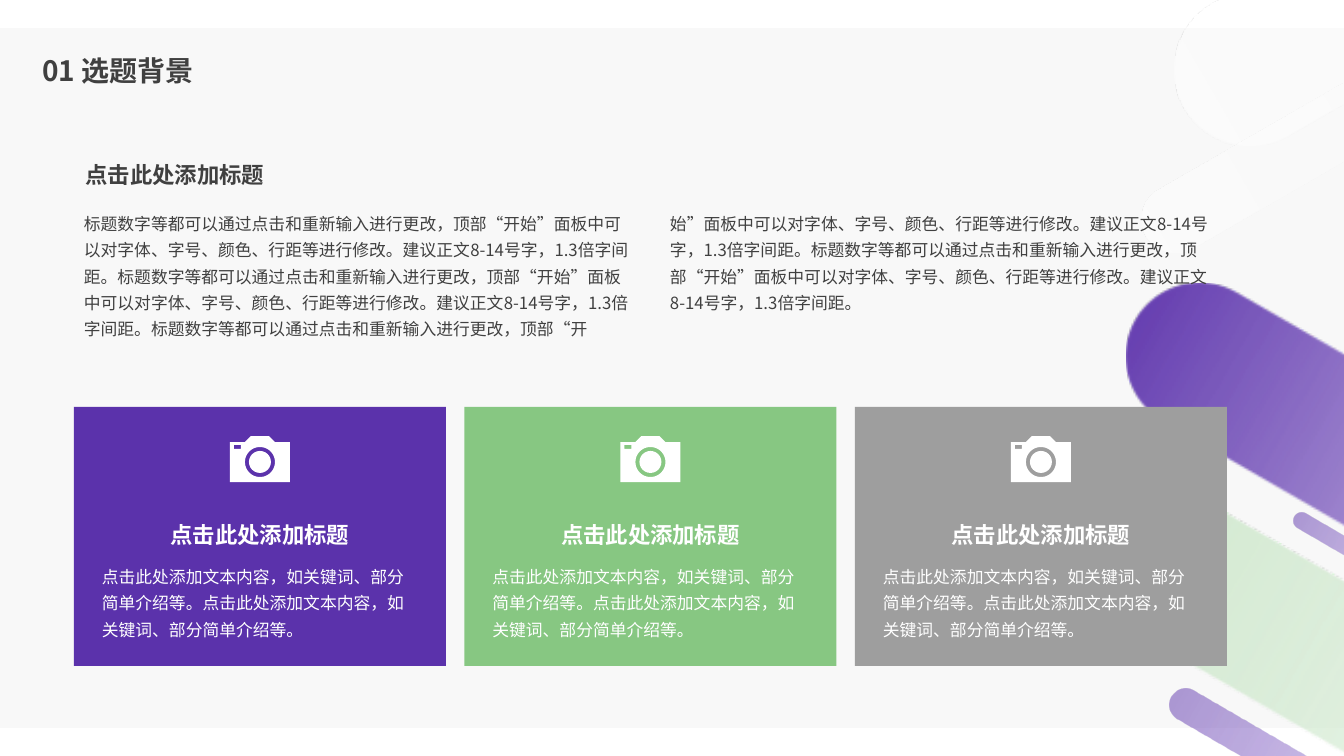
from dataclasses import dataclass
from math import cos, pi, sin

from pptx import Presentation
from pptx.dml.color import RGBColor
from pptx.enum.lang import MSO_LANGUAGE_ID as Lang
from pptx.enum.shapes import MSO_SHAPE as Preset
from pptx.enum.text import MSO_ANCHOR as Anchor, MSO_AUTO_SIZE as AutoSize, PP_ALIGN as Align
from pptx.oxml import parse_xml
from pptx.oxml.ns import nsdecls, qn
from pptx.util import Emu, Pt

EMU_PER_PX = 12192000 / 1344


@dataclass(frozen=True)
class Theme:
    purple: str = "5B32AB"
    purple_soft: str = "5F34B2"
    green: str = "87C782"
    green_pale: str = "D0E9CE"
    gray: str = "9E9E9E"
    panel: str = "F8F8F8"
    white: str = "FFFFFF"
    ink: str = "404040"
    title_size: int = 20
    heading_size: int = 16
    body_size: int = 12
    body_font: str = "Noto Sans CJK SC"
    heading_font: str = "TeX Gyre Adventor"


THEME = Theme()

HEADING = "点击此处添加标题"
INTRO = ("标题数字等都可以通过点击和重新输入进行更改，顶部“开始”面板中可以对字体、"
         "字号、颜色、行距等进行修改。建议正文8-14号字，1.3倍字间距。") * 4
CARD_BODY = "点击此处添加文本内容，如关键词、部分简单介绍等。" * 2

# Cards spread evenly between the margins
LEFT, RIGHT = 74, 1227
CARD_TOP, CARD_WIDTH, CARD_HEIGHT = 407, 372, 259
CARD_COLORS = (THEME.purple, THEME.green, THEME.gray)

# Gradient stops: position %, colour, opacity %
FADE_END = [(85, THEME.white, 50), (100, THEME.white, 50)]
PURPLE_FADE = [(0, THEME.purple, 100), (23, THEME.purple_soft, 40)] + FADE_END
LILAC_FADE = [(0, THEME.purple, 50), (23, THEME.purple_soft, 40)] + FADE_END
GREEN_FADE = [(0, THEME.green_pale, 100), (22, THEME.green_pale, 50)] + FADE_END
WHITE_FADE = [(0, THEME.white, 50), (21, THEME.white, 29),
              (85, THEME.white, 0), (100, THEME.white, 0)]

# Capsules: left, top, length, thickness, rotation, stops
CAPSULES = (
    (998, 764, 2071, 148, 210, PURPLE_FADE),
    (1105, -267, 1196, 152, 330, WHITE_FADE),
    (1111, 69, 531, 68, 330, WHITE_FADE),
    (976, 978, 2071, 148, 210, GREEN_FADE),
    (1278, 570, 246, 17, 210, LILAC_FADE),
    (1140, 799, 473, 33, 210, LILAC_FADE),
)


def px(length):
    return Emu(round(length * EMU_PER_PX))


def paint(shape, color):
    shape.shadow.inherit = False
    shape.fill.solid()
    shape.fill.fore_color.rgb = RGBColor.from_string(color)
    shape.line.fill.background()
    return shape


def add_preset(shapes, preset, left, top, width, height, color):
    return paint(shapes.add_shape(preset, px(left), px(top), px(width), px(height)), color)


def add_outline(shapes, left, top, contours, color):
    """Draw closed contours, given in px from (left, top), as one shape."""
    outlines = [[(px(x), px(y)) for x, y in contour] for contour in contours]
    builder = shapes.build_freeform(*outlines[0][0], scale=1.0)
    builder.add_line_segments(outlines[0][1:], close=True)
    for outline in outlines[1:]:
        builder.move_to(*outline[0])
        builder.add_line_segments(outline[1:], close=True)
    return paint(builder.convert_to_shape(px(left), px(top)), color)


def arc(center_x, center_y, radius, start, sweep, steps=48):
    angles = [start + sweep * step / steps for step in range(steps + 1)]
    return [(center_x + radius * cos(a), center_y + radius * sin(a)) for a in angles]


def apply_gradient(shape, stops, angle):
    stop_xml = "".join(
        f'<a:gs pos="{position * 1000}"><a:srgbClr val="{color}">'
        f'<a:alpha val="{opacity * 1000}"/></a:srgbClr></a:gs>'
        for position, color, opacity in stops)
    gradient = parse_xml(
        f'<a:gradFill {nsdecls("a")} rotWithShape="1"><a:gsLst>{stop_xml}</a:gsLst>'
        f'<a:lin ang="{angle * 60000}" scaled="0"/></a:gradFill>')
    properties = shape._element.spPr
    properties.replace(properties.find(qn("a:solidFill")), gradient)


def add_capsule(shapes, left, top, length, thickness, rotation, stops):
    """A bar with one round end that fades towards its flat end."""
    radius = thickness / 2
    outline = arc(radius, radius, radius, pi / 2, pi) + [(length, 0), (length, thickness)]
    round_end_right = rotation == 210
    if round_end_right:
        outline = [(length - x, y) for x, y in outline]
    capsule = add_outline(shapes, left, top, [outline], THEME.white)
    apply_gradient(capsule, stops, 180 if round_end_right else 0)
    capsule.rotation = rotation


def write(frame, text, size, color, font, bold=False, align=Align.LEFT, spacing=1.3):
    frame.text = text
    paragraph = frame.paragraphs[0]
    paragraph.alignment = align
    paragraph.line_spacing = spacing
    for run in paragraph.runs:
        run.font.size = Pt(size)
        run.font.bold = bold
        run.font.color.rgb = RGBColor.from_string(color)
        run.font.name = font
        run.font.language_id = Lang.SIMPLIFIED_CHINESE
        east_asian = parse_xml(f'<a:ea {nsdecls("a")} typeface="{THEME.body_font}"/>')
        run.font._element.find(qn("a:latin")).addnext(east_asian)


def add_text(shapes, left, top, width, height, wrap):
    frame = shapes.add_textbox(px(left), px(top), px(width), px(height)).text_frame
    frame.word_wrap = wrap
    frame.auto_size = AutoSize.SHAPE_TO_FIT_TEXT
    return frame


def add_heading(shapes, left, top, color):
    write(add_text(shapes, left, top, 202, 45, False), HEADING, THEME.heading_size,
          color, THEME.heading_font, bold=True, align=Align.CENTER)


def add_body(shapes, left, top, width, height, text, color):
    frame = add_text(shapes, left, top, width, height, True)
    write(frame, text, THEME.body_size, color, THEME.body_font)
    return frame


def add_camera(shapes, left, top):
    case = [(45, 6), (39, 0), (21, 0), (15, 6), (0, 6), (0, 46), (60, 46), (60, 6)]
    flash = [(4, 9), (4, 13), (11, 13), (11, 9)]
    lens_ring = arc(30, 26, 15, 0, 2 * pi)
    add_outline(shapes, left, top, [case, flash, lens_ring], THEME.white)
    add_preset(shapes, Preset.OVAL, left + 19, top + 15, 22, 22, THEME.white)


def add_card(slide, left, color):
    shapes = slide.shapes.add_group_shape().shapes
    add_preset(shapes, Preset.RECTANGLE, left, CARD_TOP, CARD_WIDTH, CARD_HEIGHT, color)
    add_camera(shapes, left + 156, CARD_TOP + 29)
    add_body(shapes, left + 18, CARD_TOP + 149, 337, 90, CARD_BODY, THEME.white)
    add_heading(shapes, left + 85, CARD_TOP + 101, THEME.white)


def set_title(slide, text):
    title = slide.shapes.title
    title.left, title.top, title.width, title.height = px(32), px(43), px(503), px(58)
    title.text_frame.vertical_anchor = Anchor.MIDDLE
    write(title.text_frame, text, THEME.title_size, THEME.ink, THEME.body_font,
          bold=True, spacing=0.9)
    title.text_frame.paragraphs[0].space_before = Pt(10)
    # Bring the title in front of the background panel
    slide.shapes._spTree.append(title._element)


def main():
    deck = Presentation()
    deck.slide_width, deck.slide_height = px(1344), px(756)
    slide = deck.slides.add_slide(deck.slide_layouts[5])

    # Background
    add_preset(slide.shapes, Preset.RECTANGLE, 0, 28, 1344, 700, THEME.panel)
    for capsule in CAPSULES:
        add_capsule(slide.shapes, *capsule)

    set_title(slide, "01 选题背景")

    # Cards
    pitch = (RIGHT - LEFT - CARD_WIDTH) / (len(CARD_COLORS) - 1)
    for index, color in enumerate(CARD_COLORS):
        add_card(slide, LEFT + index * pitch, color)

    # Introduction in two columns
    intro = add_body(slide.shapes, LEFT, 203, RIGHT - LEFT, 142, INTRO, THEME.ink)
    columns = intro._txBody.bodyPr
    columns.set("numCol", "2")
    columns.set("spcCol", str(px(39)))
    add_heading(slide.shapes, LEFT, 148, THEME.ink)

    deck.save("out.pptx")


if __name__ == "__main__":
    main()
